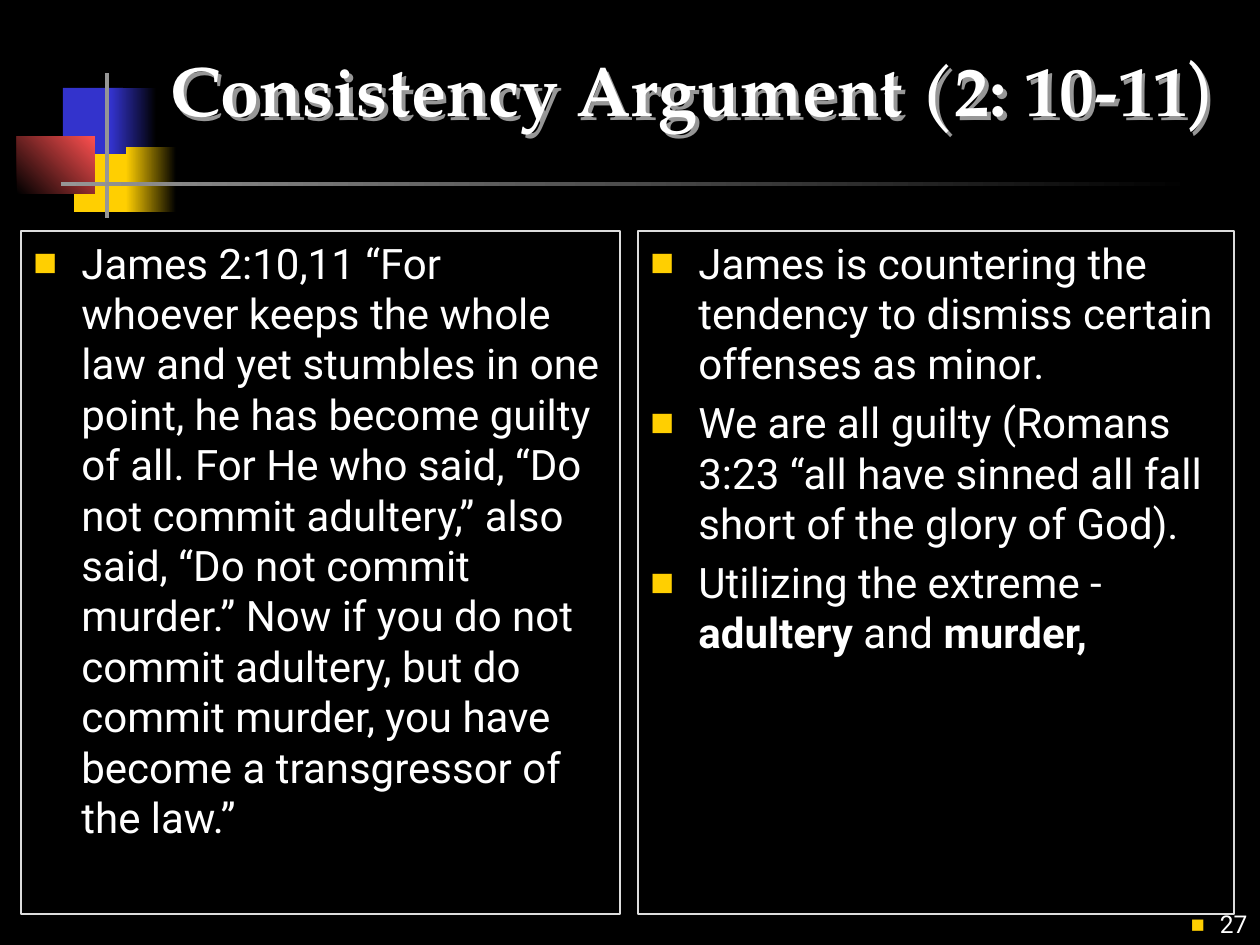
from lxml.etree import SubElement
from pptx import Presentation
from pptx.dml.color import RGBColor
from pptx.enum.shapes import MSO_SHAPE
from pptx.enum.text import MSO_ANCHOR, PP_ALIGN
from pptx.oxml.ns import qn
from pptx.util import Emu, Pt

PX_PER_INCH = 126
BODY_FONT, TITLE_FONT = "Roboto", "TeX Gyre Pagella"
BLACK = RGBColor(0x00, 0x00, 0x00)
WHITE = RGBColor(0xFF, 0xFF, 0xFF)
GRAY = RGBColor(0x96, 0x96, 0x96)
FRAME = RGBColor(0xDD, 0xDD, 0xDD)
BLUE = RGBColor(0x33, 0x33, 0xCC)
YELLOW = RGBColor(0xFF, 0xCF, 0x01)
RED = RGBColor(0xFF, 0x50, 0x50)

VERSE = (
    "James 2:10,11 “For whoever keeps the whole law and yet stumbles in one "
    "point, he has become guilty of all. For He who said, “Do not commit "
    "adultery,” also said, “Do not commit murder.” Now if you do not commit "
    "adultery, but do commit murder, you have become a transgressor of the law.”"
)
# Each paragraph is a list of (text, bold) runs
LEFT_POINTS = [[(VERSE, False)]]
RIGHT_POINTS = [
    [("James is countering the tendency to dismiss certain offenses as minor.", False)],
    [("We are all guilty (Romans 3:23 “all have sinned all fall short of the "
      "glory of God).", False)],
    [("Utilizing the extreme - ", False), ("adultery ", True),
     ("and ", False), ("murder,", True)],
]


def px(n):
    return Emu(round(n * 914400 / PX_PER_INCH))


def add_rect(s, x, y, w, h):
    sp = s.shapes.add_shape(MSO_SHAPE.RECTANGLE, px(x), px(y), px(w), px(h))
    sp.shadow.inherit = False
    sp.fill.background()
    sp.line.fill.background()
    return sp


def add_textbox(s, x, y, w, h):
    sp = s.shapes.add_textbox(px(x), px(y), px(w), px(h))
    sp.text_frame.word_wrap = True
    sp.text_frame.vertical_anchor = MSO_ANCHOR.BOTTOM
    return sp


def add_run(p, text, size, font=BODY_FONT, bold=False):
    r = p.add_run()
    r.text = text
    r.font.name = font
    r.font.size = Pt(size)
    r.font.bold = bold
    r.font.color.rgb = WHITE


def set_bullet(p, indent):
    pPr = p._p.get_or_add_pPr()
    pPr.set("marL", str(px(indent)))
    pPr.set("indent", str(-px(indent)))
    color = SubElement(pPr, qn("a:buClr"))
    SubElement(color, qn("a:srgbClr"), val=str(YELLOW))
    SubElement(pPr, qn("a:buSzPct"), val="60000")
    SubElement(pPr, qn("a:buFont"), typeface=BODY_FONT)
    SubElement(pPr, qn("a:buChar"), char="■")


def add_ornament(s, x, y):
    # Offset and size, start colour, end colour (None is solid), angle
    parts = [
        (57, 73, 58, 66, YELLOW, None, 0),
        (46, 15, 60, 66, BLUE, None, 0),
        (94, 15, 45, 66, BLUE, BLACK, 0),
        (109, 74, 50, 65, YELLOW, BLACK, 0),
        (0, 63, 78, 58, BLACK, RED, 45),
        (88, 0, 4, 145, GRAY, None, 0),
        (44, 109, 1134, 4, GRAY, BLACK, 0),
    ]
    for dx, dy, w, h, start, end, angle in parts:
        fill = add_rect(s, x + dx, y + dy, w, h).fill
        if end is None:
            fill.solid()
            fill.fore_color.rgb = start
        else:
            fill.gradient()
            fill.gradient_angle = angle
            for stop, color in zip(fill.gradient_stops, (start, end)):
                stop.color.rgb = color


def add_title(s, x, y, w, h):
    sp = add_textbox(s, x, y, w, h)
    p = sp.text_frame.paragraphs[0]
    add_run(p, "Consistency Argument (2: 10-11", 40, TITLE_FONT, True)
    add_run(p, ")", 40)
    # Text shadow, down and to the right
    effects = SubElement(sp._element.spPr, qn("a:effectLst"))
    shadow = SubElement(effects, qn("a:outerShdw"), dist=str(px(5)), dir="2700000")
    SubElement(shadow, qn("a:srgbClr"), val=str(GRAY))


def add_panel(s, x, y, w, h, points):
    sp = add_rect(s, x, y, w, h)
    sp.line.color.rgb = FRAME
    sp.line.width = Pt(0.75)
    tf = sp.text_frame
    tf.word_wrap = True
    tf.vertical_anchor = MSO_ANCHOR.TOP
    for i, runs in enumerate(points):
        p = tf.add_paragraph() if i else tf.paragraphs[0]
        p.alignment = PP_ALIGN.LEFT
        p.space_before = Pt(4.8)
        set_bullet(p, 48)
        for text, bold in runs:
            add_run(p, text, 24, bold=bold)


def add_page_number(s, x, y, w, h):
    p = add_textbox(s, x, y, w, h).text_frame.paragraphs[0]
    p.alignment = PP_ALIGN.RIGHT
    set_bullet(p, 29)
    add_run(p, "27", 14)


def main():
    prs = Presentation()
    prs.slide_width, prs.slide_height = px(1260), px(945)
    s = prs.slides.add_slide(prs.slide_layouts[6])
    s.background.fill.solid()
    s.background.fill.fore_color.rgb = BLACK

    add_ornament(s, 17, 73)
    add_page_number(s, 1124, 882, 136, 63)
    add_title(s, 158, 21, 1073, 116)
    add_panel(s, 21, 231, 599, 683, LEFT_POINTS)
    add_panel(s, 638, 231, 596, 683, RIGHT_POINTS)
    prs.save("out.pptx")


if __name__ == "__main__":
    main()
